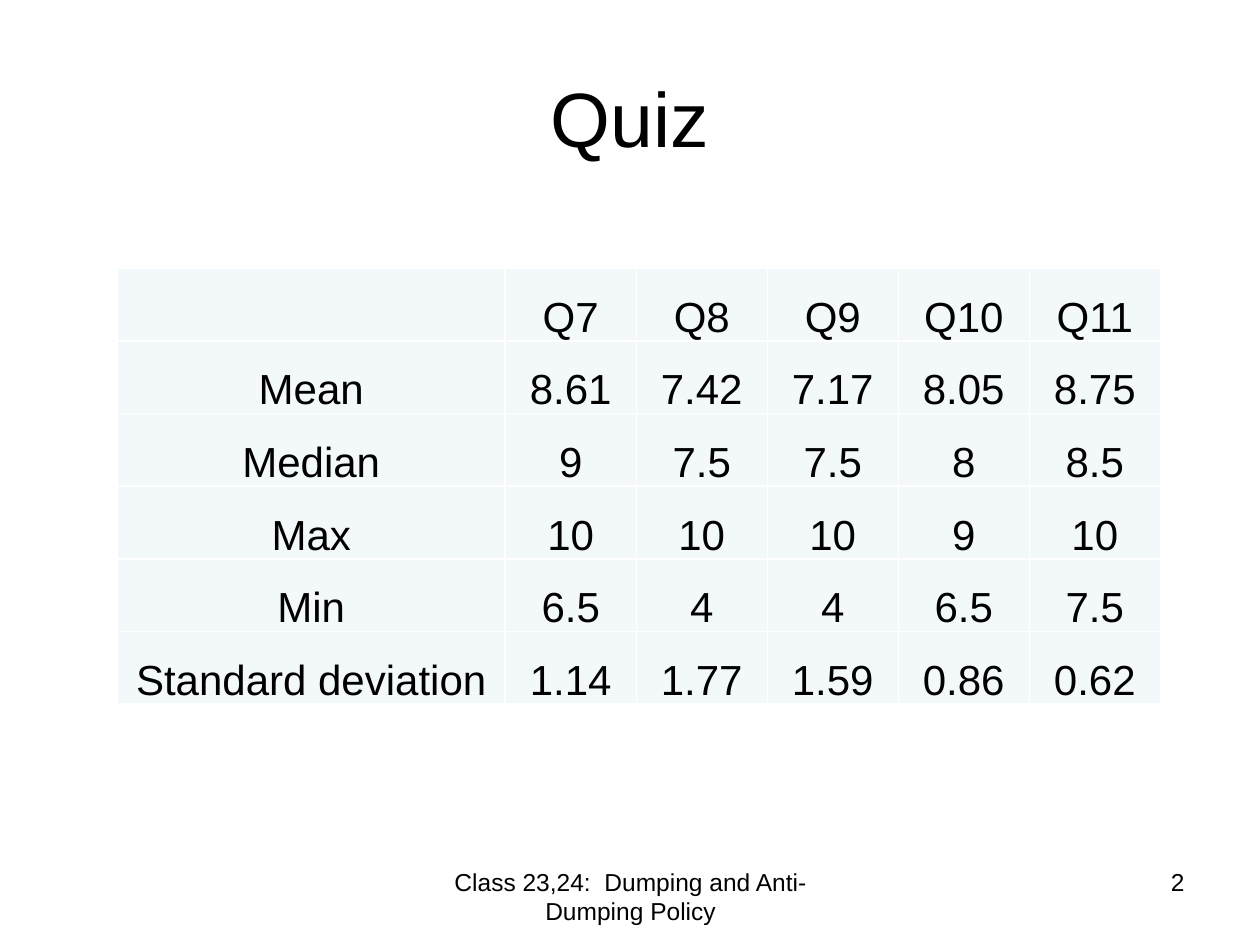
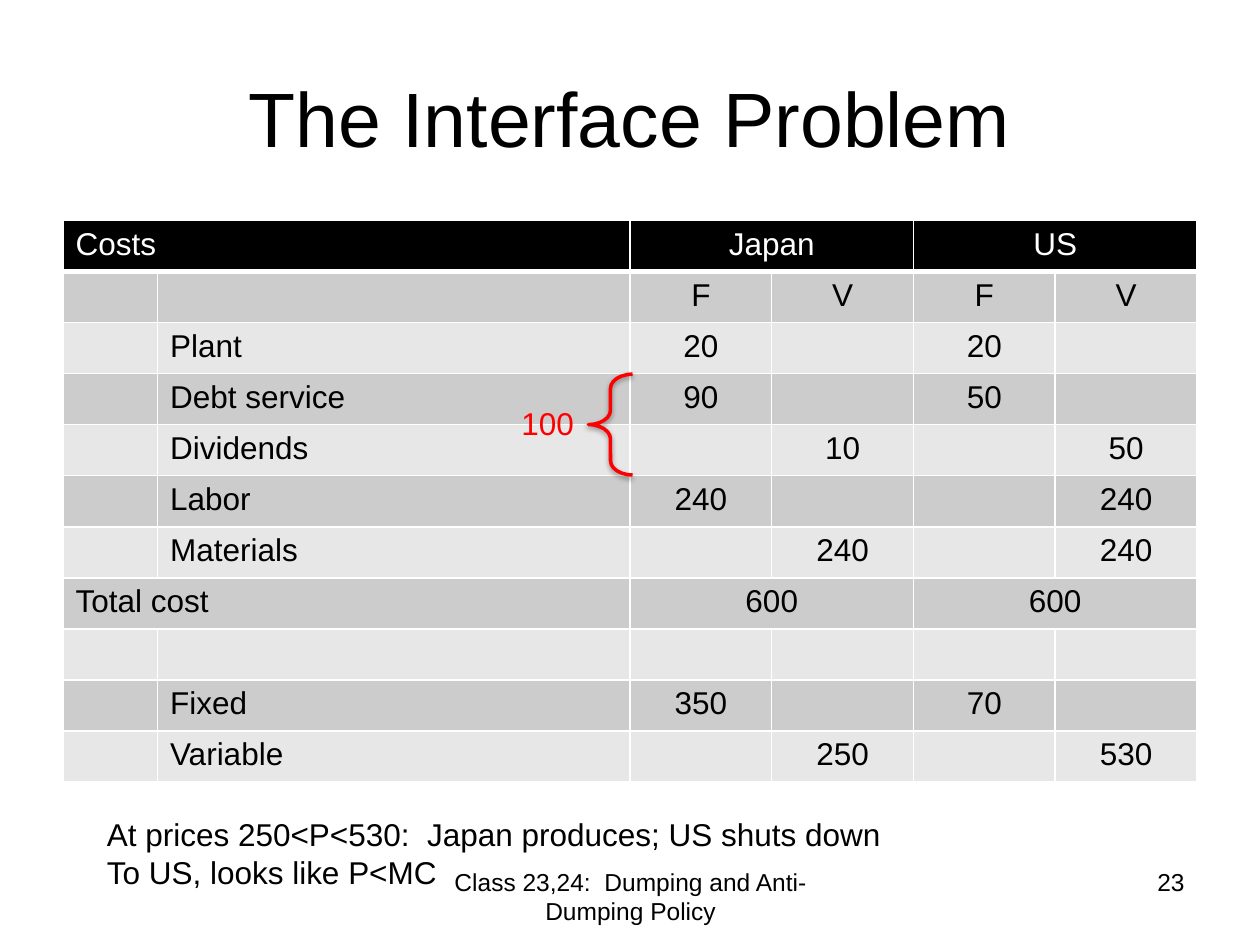
import pptx
import pptx.util
import pptx.dml.color
import pptx.enum.shapes
import pptx.enum.text
import pptx.oxml
import pptx.oxml.ns

Inches = pptx.util.Inches
Pt = pptx.util.Pt
ALIGN = pptx.enum.text.PP_ALIGN
ANCHOR = pptx.enum.text.MSO_ANCHOR
FONT = "Arial"
COLORS = {
    "text": "000000",
    "paper": "FFFFFF",
    "quiz": "F3F9FA",
    "header": "000000",
    "dark_band": "CCCCCC",
    "light_band": "E7E7E7",
    "accent": "FF0000",
}
FOOTER = "Class 23,24:  Dumping and Anti-Dumping Policy"
MERGED = None

QUIZ_ROWS = [
    ["", "Q7", "Q8", "Q9", "Q10", "Q11"],
    ["Mean", "8.61", "7.42", "7.17", "8.05", "8.75"],
    ["Median", "9", "7.5", "7.5", "8", "8.5"],
    ["Max", "10", "10", "10", "9", "10"],
    ["Min", "6.5", "4", "4", "6.5", "7.5"],
    ["Standard deviation", "1.14", "1.77", "1.59", "0.86", "0.62"],
]
COST_ROWS = [
    ["Costs", MERGED, "Japan", MERGED, "US", MERGED],
    ["", "", "F", "V", "F", "V"],
    ["", "Plant", "20", "", "20", ""],
    ["", "Debt service", "90", "", "50", ""],
    ["", "Dividends", "", "10", "", "50"],
    ["", "Labor", "240", "", "", "240"],
    ["", "Materials", "", "240", "", "240"],
    ["Total cost", MERGED, "600", MERGED, "600", MERGED],
    ["", "", "", "", "", ""],
    ["", "Fixed", "350", "", "70", ""],
    ["", "Variable", "", "250", "", "530"],
]


def rgb(name):
    """Return the named colour."""
    return pptx.dml.color.RGBColor.from_string(COLORS[name])


def write(frame, text, size=18, color="text", align=ALIGN.LEFT):
    """Fill a text frame, one paragraph per line of text."""
    for number, line in enumerate(text.split("\n")):
        paragraph = frame.add_paragraph() if number else frame.paragraphs[0]
        paragraph.alignment = align
        run = paragraph.add_run()
        run.text = line
        run.font.name = FONT
        run.font.size = Pt(size)
        run.font.color.rgb = rgb(color)


def add_text(slide, text, left, top, width, height, anchor=ANCHOR.TOP, **style):
    """Add a wrapped text box."""
    box = slide.shapes.add_textbox(
        Inches(left), Inches(top), Inches(width), Inches(height))
    box.text_frame.word_wrap = True
    box.text_frame.vertical_anchor = anchor
    write(box.text_frame, text, **style)


def add_slide(deck, title, number):
    """Add a blank slide with the shared title, footer and slide number."""
    slide = deck.slides.add_slide(deck.slide_layouts[6])
    add_text(slide, title, 0.5, 0.3, 9, 1.25, anchor=ANCHOR.MIDDLE,
             size=44, align=ALIGN.CENTER)
    add_text(slide, FOOTER, 3.42, 6.83, 3.17, 0.52, size=14, align=ALIGN.CENTER)
    add_text(slide, str(number), 7.17, 6.83, 2.33, 0.52, size=14, align=ALIGN.RIGHT)
    return slide


def set_borders(cell, bottom=1):
    """Draw white borders around a cell."""
    properties = cell._tc.get_or_add_tcPr()
    widths = {"lnL": 1, "lnR": 1, "lnT": 1, "lnB": bottom}
    for position, (side, width) in enumerate(widths.items()):
        properties.insert(position, pptx.oxml.parse_xml(
            f'<a:{side} {pptx.oxml.ns.nsdecls("a")} w="{Pt(width)}"><a:solidFill>'
            f'<a:srgbClr val="{COLORS["paper"]}"/></a:solidFill></a:{side}>'))


def add_grid(slide, rows, left, top, height, widths):
    """Add a plain table whose rows share the height, and return it."""
    table = slide.shapes.add_table(
        len(rows), len(widths), Inches(left), Inches(top),
        Inches(sum(widths)), Inches(height)).table
    table.first_row = table.horz_banding = False
    for column, width in zip(table.columns, widths):
        column.width = Inches(width)
    for r, row in enumerate(rows):
        for c, text in enumerate(row):
            if text is MERGED:
                table.cell(r, c - 1).merge(table.cell(r, c))
    return table


def fill_cell(cell, text, fill, bottom=1, **style):
    """Set the borders, fill and text of a cell."""
    set_borders(cell, bottom)
    cell.fill.solid()
    cell.fill.fore_color.rgb = rgb(fill)
    if text:
        write(cell.text_frame, text, **style)


def add_quiz_table(slide):
    """Add the quiz statistics."""
    table = add_grid(slide, QUIZ_ROWS, 0.93, 2.13, 3.46, [3.08] + [1.04] * 5)
    for r, row in enumerate(QUIZ_ROWS):
        for c, text in enumerate(row):
            cell = table.cell(r, c)
            cell.vertical_anchor = ANCHOR.BOTTOM
            cell.margin_left = cell.margin_right = cell.margin_top = Inches(0.01)
            cell.margin_bottom = 0
            fill_cell(cell, text, "quiz", size=24, align=ALIGN.CENTER)


def add_cost_table(slide):
    """Add the banded cost comparison."""
    table = add_grid(slide, COST_ROWS, 0.5, 1.75, 4.46, [0.75, 3.75] + [1.125] * 4)
    for r, row in enumerate(COST_ROWS):
        band = "dark_band" if r % 2 else "light_band"
        for c, text in enumerate(row):
            fill_cell(table.cell(r, c), text,
                      band if r else "header",
                      bottom=1 if r else 3,
                      color="text" if r else "paper",
                      align=ALIGN.LEFT if c < 2 else ALIGN.CENTER)


def add_brace(slide, left, top, width, height):
    """Add a red left brace with a soft shadow below it."""
    brace = slide.shapes.add_shape(
        pptx.enum.shapes.MSO_SHAPE.LEFT_BRACE,
        Inches(left), Inches(top), Inches(width), Inches(height))
    brace.adjustments[0] = 0.324
    brace.fill.background()
    brace.line.color.rgb = rgb("accent")
    brace.line.width = Pt(2)
    brace.shadow.inherit = False
    effects = brace._element.spPr.find(pptx.oxml.ns.qn("a:effectLst"))
    effects.append(pptx.oxml.parse_xml(
        f'<a:outerShdw {pptx.oxml.ns.nsdecls("a")} blurRad="{Pt(3.1)}" '
        f'dist="{Pt(1.6)}" dir="5400000" rotWithShape="0">'
        f'<a:srgbClr val="{COLORS["text"]}"><a:alpha val="38000"/></a:srgbClr>'
        '</a:outerShdw>'))


def main():
    """Build and save both slides."""
    deck = pptx.Presentation()
    deck.slide_width, deck.slide_height = Inches(10), Inches(7.5)

    quiz = add_slide(deck, "Quiz", 2)
    add_quiz_table(quiz)

    interface = add_slide(deck, "The Interface Problem", 23)
    add_cost_table(interface)
    add_text(interface,
             "At prices 250<P<530:  Japan produces; US shuts down\n"
             "To US, looks like P<MC", 0.75, 6.42, 8.17, 0.71)
    add_brace(interface, 4.67, 2.97, 0.35, 0.8)
    add_text(interface, "100", 4.04, 3.16, 0.73, 0.4, color="accent")

    deck.save("out.pptx")


if __name__ == "__main__":
    main()
